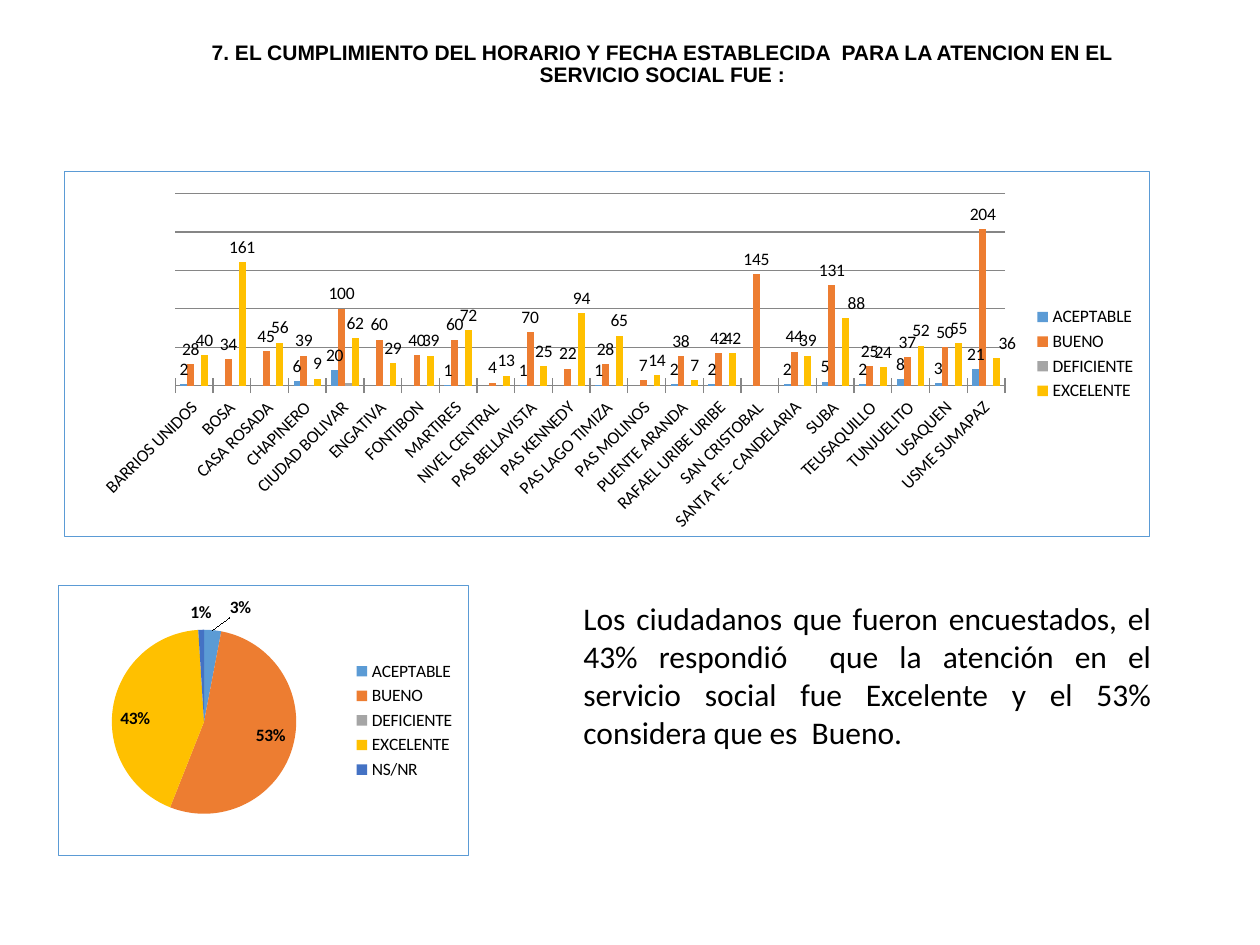
from lxml.etree import SubElement
from pptx import Presentation
from pptx.chart.data import CategoryChartData
from pptx.dml.color import RGBColor
from pptx.enum.chart import (XL_CHART_TYPE, XL_LABEL_POSITION, XL_LEGEND_POSITION,
                             XL_TICK_MARK)
from pptx.enum.text import MSO_ANCHOR, PP_ALIGN
from pptx.oxml import parse_xml
from pptx.oxml.ns import nsdecls, qn
from pptx.util import Emu, Pt

PX = 914400 / 126
BLUE, ORANGE, GRAY, YELLOW, NAVY = "5B9BD5", "ED7D31", "A5A5A5", "FFC000", "4472C4"
COLORS = [BLUE, ORANGE, GRAY, YELLOW, NAVY]
RATINGS = ["ACEPTABLE", "BUENO", "DEFICIENTE", "EXCELENTE", "NS/NR"]
SHARES = [3, 53, 0, 43, 1]

# Locality: answers in the order of the first four ratings
LOCALITIES = {
    "BARRIOS UNIDOS": (2, 28, None, 40),
    "BOSA": (None, 34, None, 161),
    "CASA ROSADA": (None, 45, None, 56),
    "CHAPINERO": (6, 39, 1, 9),
    "CIUDAD BOLIVAR": (20, 100, 3, 62),
    "ENGATIVA": (None, 60, None, 29),
    "FONTIBON": (None, 40, None, 39),
    "MARTIRES": (1, 60, None, 72),
    "NIVEL CENTRAL": (None, 4, None, 13),
    "PAS BELLAVISTA": (1, 70, None, 25),
    "PAS KENNEDY": (None, 22, 1, 94),
    "PAS LAGO TIMIZA": (1, 28, None, 65),
    "PAS MOLINOS": (None, 7, None, 14),
    "PUENTE ARANDA": (2, 38, None, 7),
    "RAFAEL URIBE URIBE": (2, 42, None, 42),
    "SAN CRISTOBAL": (None, 145, None, None),
    "SANTA FE - CANDELARIA": (2, 44, 1, 39),
    "SUBA": (5, 131, None, 88),
    "TEUSAQUILLO": (2, 25, None, 24),
    "TUNJUELITO": (8, 37, None, 52),
    "USAQUEN": (3, 50, None, 55),
    "USME SUMAPAZ": (21, 204, 1, 36),
}


def px(n):
    return Emu(round(n * PX))


def rgb(color):
    return RGBColor.from_string(color)


def set_font(font, size, name="Calibri", color="000000", bold=False):
    font.size, font.name, font.bold = Pt(size), name, bold
    font.color.rgb = rgb(color)


def add_text(slide, text, box, size, font="Calibri", bold=False,
             align=PP_ALIGN.LEFT, anchor=MSO_ANCHOR.TOP, spacing=None):
    tf = slide.shapes.add_textbox(*map(px, box)).text_frame
    tf.word_wrap = True
    tf.vertical_anchor = anchor
    p = tf.paragraphs[0]
    p.alignment = align
    p.line_spacing = spacing
    r = p.add_run()
    r.text = text
    set_font(r.font, size, font, bold=bold)


def manual_layout(**parts):
    layout = parse_xml(f"<c:layout {nsdecls('c')}><c:manualLayout/></c:layout>")
    for tag, value in parts.items():
        SubElement(layout[0], qn(f"c:{tag}")).set("val", str(value))
    return layout


def add_chart(slide, kind, box, categories, series, plot_box):
    """Add a bordered chart with a legend at the right and a fixed inner plot area."""
    data = CategoryChartData()
    data.categories = categories
    for name, values in series:
        data.add_series(name, values)
    chart = slide.shapes.add_chart(kind, *map(px, box), data).chart
    chart.has_title = False
    set_font(chart.font, 10)
    chart.has_legend = True
    chart.legend.position = XL_LEGEND_POSITION.RIGHT
    chart.legend.include_in_layout = False

    space = chart.element
    space.find(qn("c:txPr")).addprevious(parse_xml(
        f'<c:spPr {nsdecls("c", "a")}><a:noFill/><a:ln w="9525"><a:solidFill>'
        f'<a:srgbClr val="{BLUE}"/></a:solidFill></a:ln></c:spPr>'))
    area = space.find(".//" + qn("c:plotArea"))
    for old in area.findall(qn("c:layout")):
        area.remove(old)
    x, y, w, h = plot_box
    area.insert(0, manual_layout(layoutTarget="inner", xMode="edge", yMode="edge",
                                 x=x, y=y, w=w, h=h))
    return chart


def place_label(point, position, shift=None, percent=False, bold=False):
    label = point.data_label
    set_font(label.font, 10, bold=bold)
    label.position = position
    d_lbl = point.data_label._get_or_add_dLbl()
    d_lbl.find(qn("c:showVal")).set("val", str(int(not percent)))
    d_lbl.find(qn("c:showPercent")).set("val", str(int(percent)))
    if shift:
        d_lbl.find(qn("c:idx")).addnext(manual_layout(x=shift[0], y=shift[1]))


def add_locality_chart(slide):
    series = list(zip(RATINGS, zip(*LOCALITIES.values())))
    chart = add_chart(slide, XL_CHART_TYPE.COLUMN_CLUSTERED, (64, 171, 1086, 366),
                      list(LOCALITIES), series, (0.102, 0.06, 0.765, 0.527))
    plot = chart.plots[0]
    plot.gap_width, plot.overlap, plot.vary_by_categories = 150, 0, False
    for s, color in zip(plot.series, COLORS):
        s.format.fill.solid()
        s.format.fill.fore_color.rgb = rgb(color)
        if s.name != "DEFICIENTE":
            s.data_labels.show_value = True
            s.data_labels.position = XL_LABEL_POSITION.OUTSIDE_END
            set_font(s.data_labels.font, 10)
    names = list(LOCALITIES)
    for name in ("SUBA", "USME SUMAPAZ"):
        place_label(plot.series[3].points[names.index(name)],
                    XL_LABEL_POSITION.OUTSIDE_END, shift=(0.01, 0))

    values = chart.value_axis
    values.minimum_scale, values.maximum_scale, values.major_unit = 0, 250, 50
    values.visible = False
    values.has_major_gridlines = True
    cats = chart.category_axis
    cats.major_tick_mark = XL_TICK_MARK.CROSS
    set_font(cats.tick_labels.font, 10)
    cats._element.find(qn("c:txPr")).find(qn("a:bodyPr")).set("rot", "-2700000")
    for line in (values.major_gridlines.format.line, cats.format.line):
        line.color.rgb = rgb("868686")
        line.width = Pt(0.75)


def add_share_chart(slide):
    chart = add_chart(slide, XL_CHART_TYPE.PIE, (58, 585, 411, 271), RATINGS,
                      [("Series 1", SHARES)], (0.13, 0.16, 0.45, 0.69))
    plot = chart.plots[0]
    plot.vary_by_categories = True
    s = plot.series[0]
    labels = s.data_labels
    labels.show_value, labels.show_percentage = False, True
    labels.number_format, labels.number_format_is_linked = "0%", False
    labels.position = XL_LABEL_POSITION.OUTSIDE_END
    set_font(labels.font, 10, bold=True)
    for i, (color, share) in enumerate(zip(COLORS, SHARES)):
        point = s.points[i]
        point.format.fill.solid()
        point.format.fill.fore_color.rgb = rgb(color)
        if share > 10:
            place_label(point, XL_LABEL_POSITION.INSIDE_END, percent=True, bold=True)
    place_label(s.points[0], XL_LABEL_POSITION.OUTSIDE_END, shift=(0.04, -0.02),
                percent=True, bold=True)


def main():
    prs = Presentation()
    prs.slide_width, prs.slide_height = px(1260), px(945)
    slide = prs.slides.add_slide(prs.slide_layouts[6])
    add_text(slide, "7. EL CUMPLIMIENTO DEL HORARIO Y FECHA ESTABLECIDA  PARA LA "
             "ATENCION EN EL SERVICIO SOCIAL FUE :", (152, 24, 1021, 81), 12,
             font="Arial", bold=True, align=PP_ALIGN.CENTER,
             anchor=MSO_ANCHOR.MIDDLE, spacing=0.9)
    add_locality_chart(slide)
    add_share_chart(slide)
    add_text(slide, "Los ciudadanos que fueron encuestados, el 43% respondió  que la "
             "atención en el servicio social fue Excelente y el 53% considera que es  "
             "Bueno.", (571, 593, 593, 165), 18, align=PP_ALIGN.JUSTIFY)
    prs.save("out.pptx")


if __name__ == "__main__":
    main()
